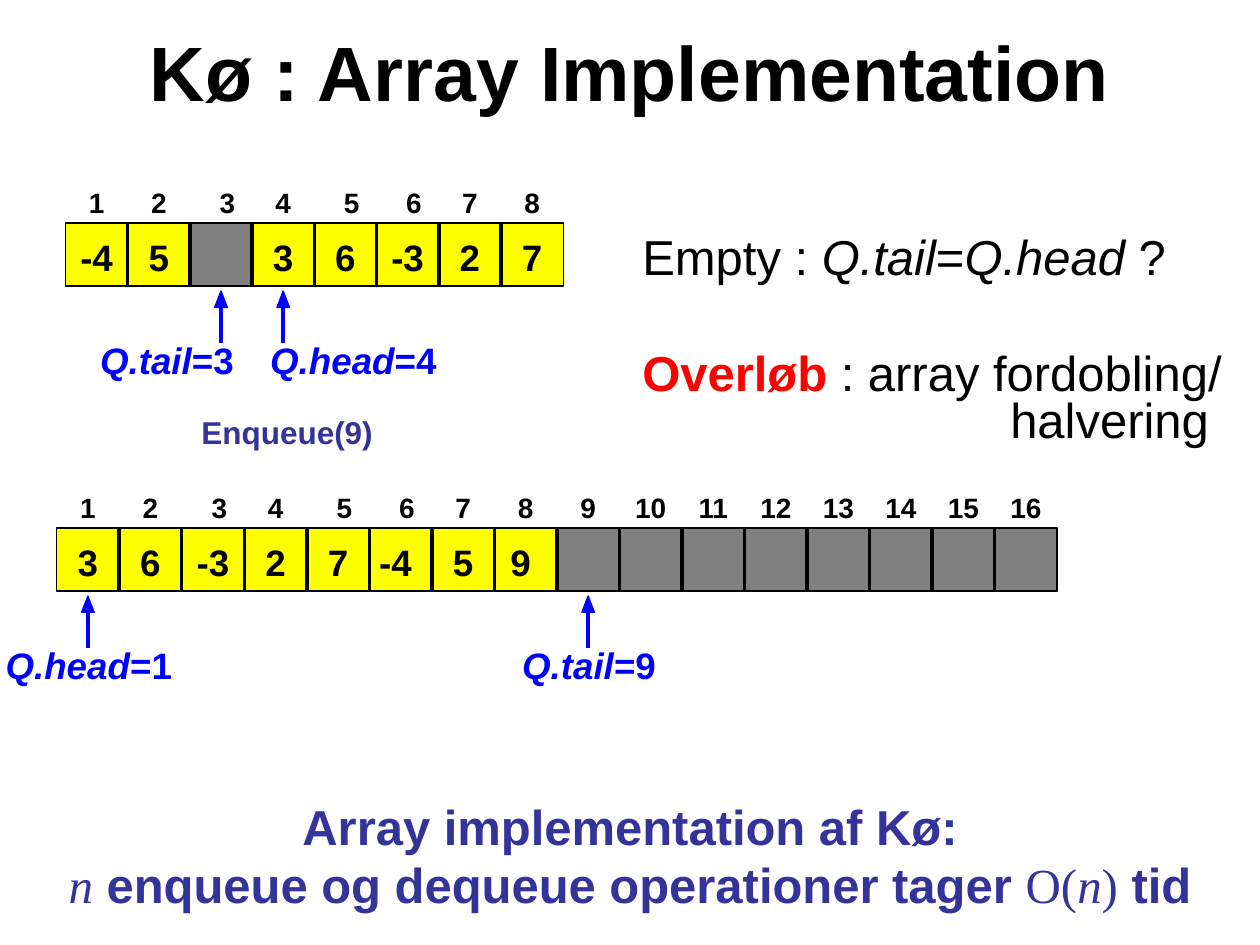
from lxml import etree
from pptx import Presentation
from pptx.dml.color import RGBColor
from pptx.enum.shapes import MSO_CONNECTOR, MSO_SHAPE
from pptx.enum.text import MSO_ANCHOR, MSO_AUTO_SIZE, PP_ALIGN
from pptx.oxml.ns import qn
from pptx.util import Inches, Pt

BLACK = RGBColor(0x00, 0x00, 0x00)
YELLOW = RGBColor(0xFF, 0xFF, 0x00)
GRAY = RGBColor(0x80, 0x80, 0x80)
BLUE = RGBColor(0x00, 0x00, 0xFF)
INDIGO = RGBColor(0x33, 0x33, 0x99)
RED = RGBColor(0xFF, 0x00, 0x00)
CENTER, LEFT = PP_ALIGN.CENTER, PP_ALIGN.LEFT
RECT, STRAIGHT = MSO_SHAPE.RECTANGLE, MSO_CONNECTOR.STRAIGHT
FIT = MSO_AUTO_SIZE.SHAPE_TO_FIT_TEXT
SERIF = "Times New Roman"


def add_text(shapes, box, paragraphs, size, color, bold=False, align=LEFT, label=False):
    """Each paragraph is a list of (text, {font attribute: value}) runs."""
    tf = shapes.add_textbox(*map(Inches, box)).text_frame
    tf.word_wrap = not label
    if label:
        tf.margin_left = tf.margin_right = tf.margin_top = tf.margin_bottom = 0
        tf.auto_size = FIT
    for i, runs in enumerate(paragraphs):
        p = tf.paragraphs[0] if i == 0 else tf.add_paragraph()
        p.alignment = align
        p.font.size, p.font.name, p.font.bold = Pt(size), "Arial", bold
        p.font.color.rgb = color
        for text, style in runs:
            r = p.add_run()
            r.text = text
            for name, value in style.items():
                if name == "color":
                    r.font.color.rgb = value
                else:
                    setattr(r.font, name, value)
    return tf


def add_line(shapes, x, y1, y2, color):
    line = shapes.add_connector(STRAIGHT, Inches(x), Inches(y1), Inches(x), Inches(y2))
    line.line.color.rgb = color
    line.line.width = Pt(0)
    etree.SubElement(line._element.spPr, qn("a:effectLst"))


prs = Presentation()
prs.slide_width, prs.slide_height = Inches(10), Inches(7.5)
s = prs.slides.add_slide(prs.slide_layouts[5])

# Title
title = s.shapes.title
title.left, title.top, title.width, title.height = map(Inches, (0.5, 0, 9, 1.12))
tf = title.text_frame
tf.text = "Kø : Array Implementation"
tf.vertical_anchor = MSO_ANCHOR.MIDDLE
p = tf.paragraphs[0]
p.alignment = CENTER
p.font.size, p.font.name, p.font.bold = Pt(44), "Arial", True
p.font.color.rgb = BLACK

# Remarks on the right
italic = {"italic": True}
add_text(s.shapes, (5, 1.75, 4.67, 0.75),
         [[("Empty : ", {}), ("Q.tail", italic), ("=", {}), ("Q.head", italic), (" ?", {})]],
         28, BLACK)
tf = add_text(s.shapes, (5, 2.67, 5, 0.75),
              [[("Overløb", {"bold": True, "color": RED}), (" : array fordobling/", {})],
               [("halvering", {})]], 28, BLACK)
p = tf.paragraphs[1]
p.line_spacing, p.space_before = 0.55, Pt(6.4)
p._p.get_or_add_pPr().set("marL", str(Inches(2.92)))

# Operation between the two arrays
tf = add_text(s.shapes, (1.5, 3.25, 2.08, 0.39), [[("Enqueue(9)", {})]], 18, INDIGO, True)
tf.paragraphs[0].line_spacing = 0.95

# Conclusion
math = {"name": SERIF, "bold": False}
math_italic = {**math, **italic}
tf = add_text(s.shapes, (0, 6.42, 10, 0.89),
              [[("Array implementation af Kø:", {})],
               [("n", math_italic), (" enqueue og dequeue operationer tager ", {}),
                ("O(", math), ("n", math_italic), (")", math), (" tid", {})]],
              28, INDIGO, True, CENTER)
for p in tf.paragraphs:
    p.line_spacing = 0.65
    p.space_before = Pt(11.3)

# Arrays: left, top, width, values, gray cells (first, count),
# pointers (cell, name, value, label left, label width), moved values
arrays = [
    (0.52, 1.77, 3.95, ["-4", "5", "", "3", "6", "-3", "2", "7"], (2, 1),
     [(3, "Q.head", "=4", 2.14, 1.33), (2, "Q.tail", "=3", 0.79, 1.07)], ()),
    (0.45, 4.19, 7.94, ["3", "6", "-3", "2", "7", "-4", "5", "9"] + [""] * 8, (8, 8),
     [(0, "Q.head", "=1", 0.04, 1.33), (8, "Q.tail", "=9", 4.14, 1.07)], (5, 7)),
]
for left, top, width, values, (first, count), pointers, moved in arrays:
    shapes = s.shapes.add_group_shape().shapes
    cell, height = width / len(values), 0.5

    # Cells
    for x, w, color in ((left, width, YELLOW), (left + first * cell, count * cell, GRAY)):
        sp = shapes.add_shape(RECT, *map(Inches, (x, top, w, height)))
        sp.shadow.inherit = False
        sp.fill.solid()
        sp.fill.fore_color.rgb = color
        sp.line.color.rgb = BLACK
        sp.line.width = Pt(0)
    for i in range(1, len(values)):
        add_line(shapes, left + i * cell, top + height, top, BLACK)

    # Indices and values
    for i, value in enumerate(values):
        middle = left + (i + 0.5) * cell
        w = 0.2 if i < 9 else 0.32
        x = middle - w / 2 + (0.05 if i in (2, 4, 5) else 0)
        add_text(shapes, (x, top - 0.3, w, 0.3), [[(str(i + 1), {})]],
                 16, BLACK, True, CENTER, label=True)
        if value:
            w = 0.27 if len(value) == 1 else 0.36
            x = middle - w / 2 - (0.04 if i in moved else 0)
            add_text(shapes, (x, top + 0.09, w, 0.39), [[(value, {})]],
                     21, BLACK, True, CENTER, label=True)

    # Pointers
    for i, name, value, x, w in pointers:
        middle = left + (i + 0.5) * cell
        add_line(shapes, middle, top + 0.95, top + 0.63, BLUE)
        head = shapes.build_freeform(Inches(middle - 0.05), Inches(top + 0.67))
        head.add_line_segments([(Inches(middle), Inches(top + 0.54)),
                                (Inches(middle + 0.05), Inches(top + 0.67))])
        sp = head.convert_to_shape()
        sp.shadow.inherit = False
        sp.fill.solid()
        sp.fill.fore_color.rgb = BLUE
        sp.line.color.rgb = BLUE
        sp.line.width = Pt(0)
        add_text(shapes, (x, top + 0.91, w, 0.35), [[(name, italic), (value, {})]],
                 21, BLUE, True, CENTER, label=True)

prs.save("out.pptx")
